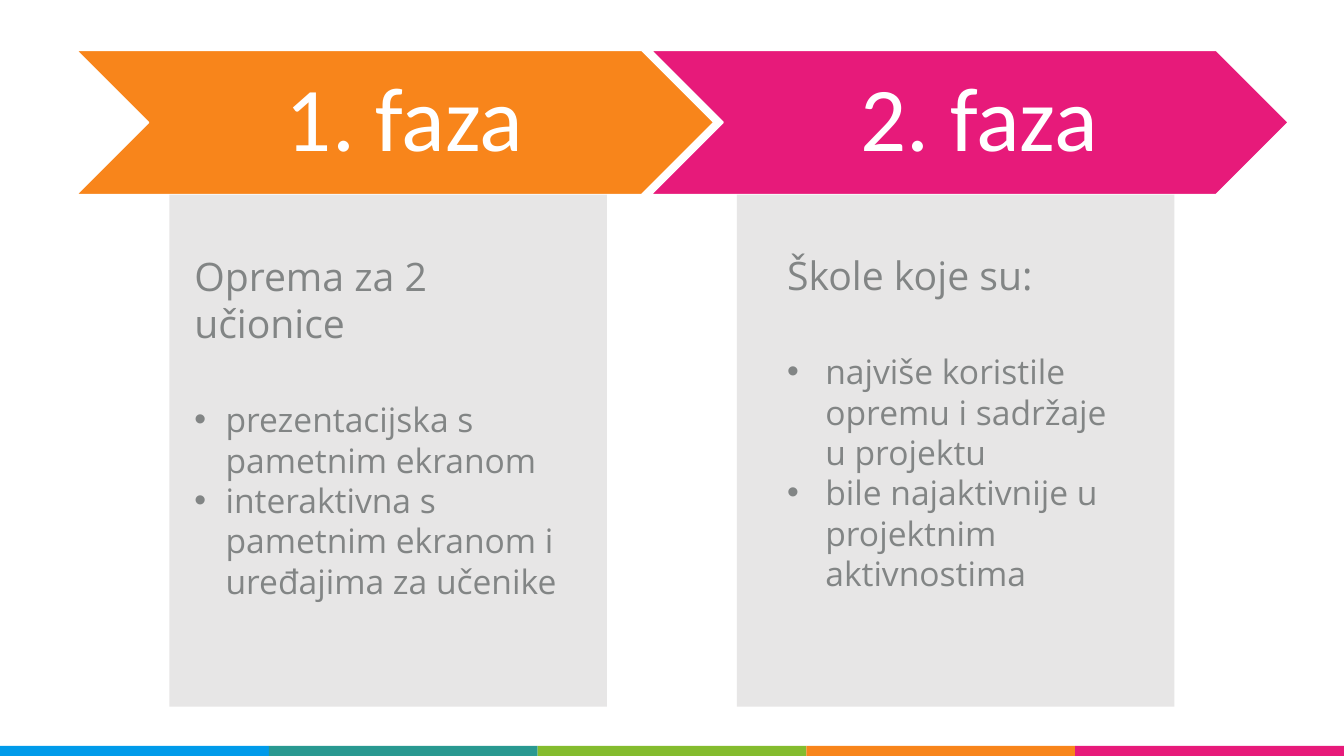
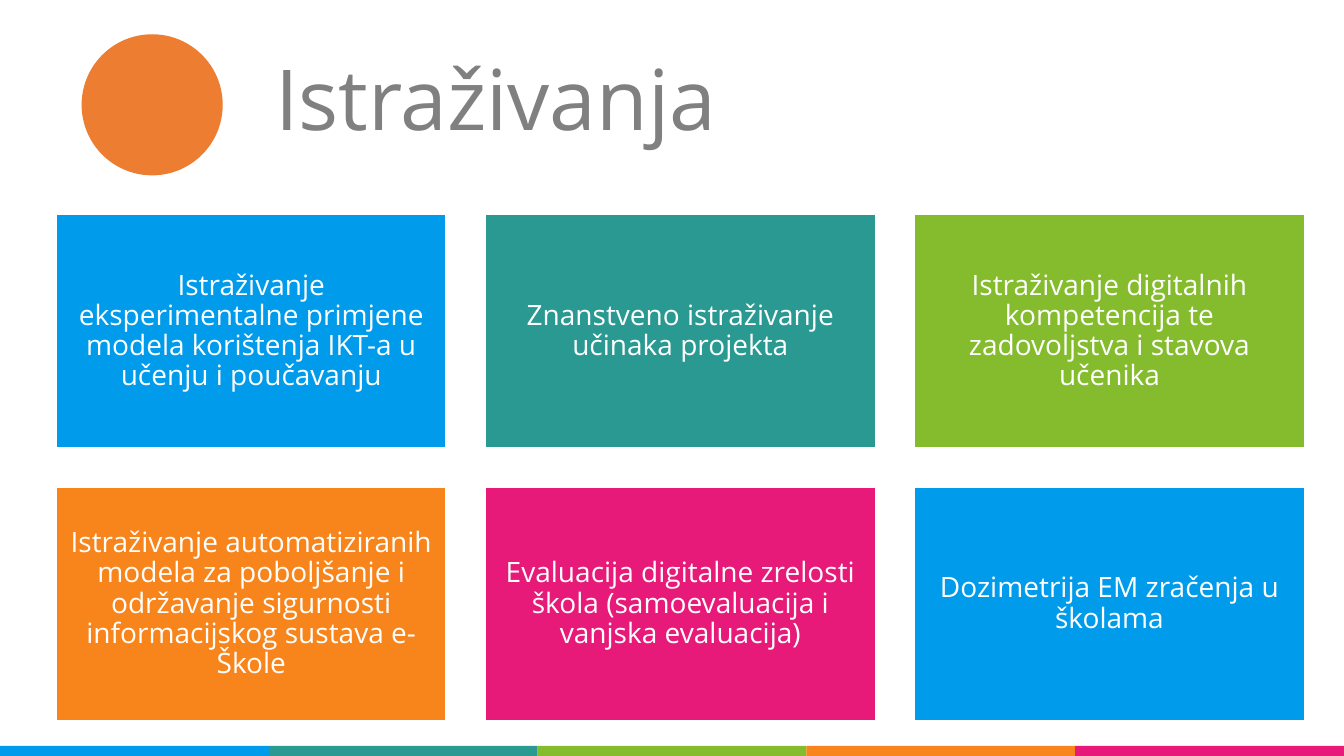
from lxml.etree import SubElement
from pptx import Presentation
from pptx.dml.color import RGBColor
from pptx.enum.shapes import MSO_SHAPE as Shape
from pptx.enum.text import MSO_ANCHOR as Anchor, PP_ALIGN as Align
from pptx.oxml.ns import qn
from pptx.util import Inches, Pt

COLOURS = {
    "blue": "009BEA", "teal": "299991", "green": "84BC2E",
    "orange": "F8851B", "pink": "E71A7A", "badge": "ED7D31",
    "panel": "E7E6E6", "body": "828585", "title": "808080", "white": "FFFFFF",
}
ACCENTS = ["blue", "teal", "green", "orange", "pink"]
SLIDE_WIDTH, SLIDE_HEIGHT = 13.333, 7.5
BAND_TOP, BAND_HEIGHT = 7.4, 0.15
CARD_GAP = 0.39

# Text styles: font, paragraph and frame values
STYLES = {
    "phase": {
        "font": {"name": "Calibri", "size": Pt(65)}, "colour": "white",
        "paragraph": {"alignment": Align.CENTER, "line_spacing": 0.9},
        "frame": {"vertical_anchor": Anchor.MIDDLE, "margin_left": Inches(0.28),
                  "margin_right": Inches(0.09)},
    },
    "card": {
        "font": {"name": "Open Sans", "size": Pt(20)}, "colour": "white",
        "paragraph": {"alignment": Align.CENTER, "line_spacing": 0.9},
        "frame": {"vertical_anchor": Anchor.MIDDLE, "margin_left": Inches(0.08),
                  "margin_right": Inches(0.08), "margin_top": Inches(0.08),
                  "margin_bottom": Inches(0.08)},
    },
    "title": {
        "font": {"name": "Open Sans", "size": Pt(60)}, "colour": "title",
        "paragraph": {"line_spacing": 0.9},
        "frame": {"vertical_anchor": Anchor.BOTTOM},
    },
    "heading": {
        "font": {"name": "Open Sans", "size": Pt(28)}, "colour": "body",
        "paragraph": {"space_after": Pt(38)}, "frame": {},
    },
    "bullet": {
        "font": {"name": "Open Sans", "size": Pt(24)}, "colour": "body",
        "paragraph": {}, "frame": {},
    },
}

PHASES = [
    {"name": "1. faza", "colour": "orange", "arrow": 0.76, "panel": 1.68,
     "note": (1.83, 2.45, 4.04, 3.67), "indent": 0.31,
     "heading": "Oprema za 2 učionice",
     "bullets": ["prezentacijska s pametnim ekranom",
                 "interaktivna s pametnim ekranom i uređajima za učenike"]},
    {"name": "2. faza", "colour": "pink", "arrow": 6.46, "panel": 7.31,
     "note": (7.71, 2.44, 3.54, 3.47), "indent": 0.38,
     "heading": "Škole koje su:",
     "bullets": ["najviše koristile opremu i sadržaje u projektu",
                 "bile najaktivnije u projektnim aktivnostima"]},
]
STUDIES = [
    "Istraživanje eksperimentalne primjene modela korištenja IKT-a u učenju i poučavanju",
    "Znanstveno istraživanje učinaka projekta",
    "Istraživanje digitalnih kompetencija te zadovoljstva i stavova učenika",
    "Istraživanje automatiziranih modela za poboljšanje i održavanje sigurnosti "
    "informacijskog sustava e-Škole",
    "Evaluacija digitalne zrelosti škola (samoevaluacija i vanjska evaluacija)",
    "Dozimetrija EM zračenja u školama",
]


def colour(name):
    return RGBColor.from_string(COLOURS[name])


def apply(target, values):
    for attribute, value in values.items():
        setattr(target, attribute, value)


def write(frame, paragraph, text, style_name):
    style = STYLES[style_name]
    frame.word_wrap = True
    apply(frame, style["frame"])
    apply(paragraph, style["paragraph"])
    run = paragraph.add_run()
    run.text = text
    apply(run.font, style["font"])
    run.font.color.rgb = colour(style["colour"])


def add_box(slide, kind, box, fill, outlined=False):
    shape = slide.shapes.add_shape(kind, *map(Inches, box))
    shape.shadow.inherit = False
    shape.fill.solid()
    shape.fill.fore_color.rgb = colour(fill)
    if outlined:
        shape.line.color.rgb = colour("white")
        shape.line.width = Pt(1)
    else:
        shape.line.fill.background()
    return shape


def add_text_frame(slide, box):
    return slide.shapes.add_textbox(*map(Inches, box)).text_frame


def add_bullet(paragraph, indent):
    properties = paragraph._p.get_or_add_pPr()
    properties.set("marL", str(Inches(indent)))
    properties.set("indent", str(-Inches(indent)))
    SubElement(properties, qn("a:buFont")).set("typeface", "Arial")
    SubElement(properties, qn("a:buChar")).set("char", "•")


def add_slide(presentation):
    """Blank slide with the five-colour footer band."""
    slide = presentation.slides.add_slide(presentation.slide_layouts[6])
    width = SLIDE_WIDTH / len(ACCENTS)
    for index, accent in enumerate(ACCENTS):
        add_box(slide, Shape.RECTANGLE,
                (index * width, BAND_TOP, width, BAND_HEIGHT), accent)
    return slide


def add_note(slide, box, phase):
    frame = add_text_frame(slide, box)
    write(frame, frame.paragraphs[0], phase["heading"], "heading")
    for text in phase["bullets"]:
        paragraph = frame.add_paragraph()
        write(frame, paragraph, text, "bullet")
        add_bullet(paragraph, phase["indent"])


def add_phase(slide, phase):
    # Arrow with the phase name
    arrow = add_box(slide, Shape.CHEVRON, (phase["arrow"], 0.5, 6.32, 1.43),
                    phase["colour"], outlined=True)
    frame = arrow.text_frame
    write(frame, frame.paragraphs[0], phase["name"], "phase")
    # Panel below it
    add_box(slide, Shape.RECTANGLE, (phase["panel"], 1.93, 4.34, 5.08), "panel")
    add_note(slide, phase["note"], phase)


def add_title(slide, box):
    left, top, width, height = box
    add_box(slide, Shape.OVAL, (left, top, 1.4, 1.4), "badge")
    frame = add_text_frame(slide, (left + 1.82, top + 0.05, width - 1.82, height))
    write(frame, frame.paragraphs[0], "Istraživanja", "title")


def add_card_grid(slide, box, texts, columns=3):
    left, top, width, height = box
    rows = -(-len(texts) // columns)
    card_width = (width - (columns - 1) * CARD_GAP) / columns
    card_height = (height - (rows - 1) * CARD_GAP) / rows
    for index, text in enumerate(texts):
        row, column = divmod(index, columns)
        card = add_box(slide, Shape.RECTANGLE,
                       (left + column * (card_width + CARD_GAP),
                        top + row * (card_height + CARD_GAP),
                        card_width, card_height),
                       ACCENTS[index % len(ACCENTS)], outlined=True)
        write(card.text_frame, card.text_frame.paragraphs[0], text, "card")


def build_phases_slide(presentation):
    slide = add_slide(presentation)
    for phase in PHASES:
        add_phase(slide, phase)


def build_studies_slide(presentation):
    slide = add_slide(presentation)
    add_card_grid(slide, (0.56, 2.13, 12.38, 5.02), STUDIES)
    add_title(slide, (0.81, 0.34, 7.07, 1.13))


def main():
    presentation = Presentation()
    presentation.slide_width = Inches(SLIDE_WIDTH)
    presentation.slide_height = Inches(SLIDE_HEIGHT)
    build_phases_slide(presentation)
    build_studies_slide(presentation)
    presentation.save("out.pptx")


if __name__ == "__main__":
    main()
